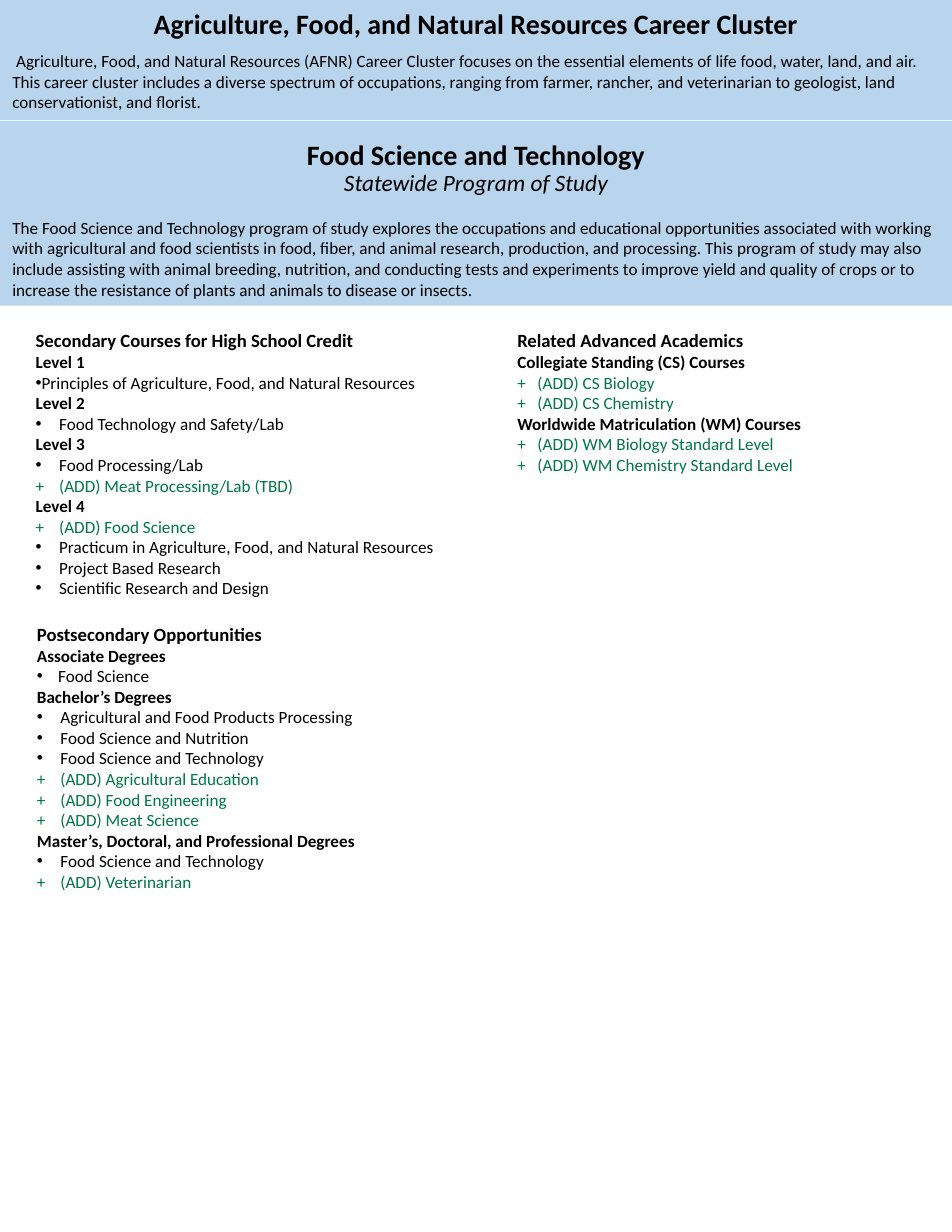
from lxml.etree import SubElement
from pptx import Presentation
from pptx.dml.color import RGBColor
from pptx.enum.text import MSO_ANCHOR as Anchor, PP_ALIGN as Align
from pptx.oxml.ns import qn
from pptx.util import Inches, Pt

THEME = {
    "font": "Calibri",
    "band": RGBColor.from_string("B9D4ED"),
    "text": RGBColor.from_string("000000"),
    "added": RGBColor.from_string("007742"),
    "title": 18,
    "subtitle": 15,
    "heading": 12,
    "body": 11,
}
STYLES = {
    "title": {"size": "title", "bold": True, "align": Align.CENTER},
    "subtitle": {"size": "subtitle", "italic": True, "align": Align.CENTER},
    "heading": {"size": "heading", "bold": True},
    "level": {"bold": True},
    "body": {},
    "flush": {"bullet": True},
    "course": {"bullet": True, "indent": 0.21},
    "degree": {"bullet": True, "indent": 0.19},
    "added": {"color": "added", "indent": 0.21, "lead": "+\t"},
    "advanced": {"color": "added", "indent": 0.18, "lead": "+\t"},
}

PROGRAM = [
    ("title", "Food Science and Technology"),
    ("subtitle", "Statewide Program of Study"),
]
CLUSTER = [
    ("title", "Agriculture, Food, and Natural Resources Career Cluster"),
    ("body", " Agriculture, Food, and Natural Resources (AFNR) Career Cluster focuses on "
             "the essential elements of life food, water, land, and air. This career cluster "
             "includes a diverse spectrum of occupations, ranging from farmer, rancher, and "
             "veterinarian to geologist, land conservationist, and florist."),
]
DESCRIPTION = [
    ("body", "The Food Science and Technology program of study explores the occupations and "
             "educational opportunities associated with working with agricultural and food "
             "scientists in food, fiber, and animal research, production, and processing. "
             "This program of study may also include assisting with animal breeding, "
             "nutrition, and conducting tests and experiments to improve yield and quality "
             "of crops or to increase the resistance of plants and animals to disease or "
             "insects."),
]
SECONDARY = [
    ("heading", "Secondary Courses for High School Credit"),
    ("level", "Level 1"),
    ("flush", "Principles of Agriculture, Food, and Natural Resources"),
    ("level", "Level 2"),
    ("course", "Food Technology and Safety/Lab"),
    ("level", "Level 3"),
    ("course", "Food Processing/Lab"),
    ("added", "(ADD) Meat Processing/Lab (TBD)"),
    ("level", "Level 4"),
    ("added", "(ADD) Food Science"),
    ("course", "Practicum in Agriculture, Food, and Natural Resources"),
    ("course", "Project Based Research"),
    ("course", "Scientific Research and Design"),
]
ADVANCED = [
    ("heading", "Related Advanced Academics"),
    ("level", "Collegiate Standing (CS) Courses"),
    ("advanced", "(ADD) CS Biology"),
    ("advanced", "(ADD) CS Chemistry"),
    ("level", "Worldwide Matriculation (WM) Courses"),
    ("advanced", "(ADD) WM Biology Standard Level"),
    ("advanced", "(ADD) WM Chemistry Standard Level"),
]
POSTSECONDARY = [
    ("heading", "Postsecondary Opportunities"),
    ("level", "Associate Degrees"),
    ("degree", "Food Science"),
    ("level", "Bachelor’s Degrees"),
    ("course", "Agricultural and Food Products Processing"),
    ("course", "Food Science and Nutrition"),
    ("course", "Food Science and Technology"),
    ("added", "(ADD) Agricultural Education"),
    ("added", "(ADD) Food Engineering"),
    ("added", "(ADD) Meat Science"),
    ("level", "Master’s, Doctoral, and Professional Degrees"),
    ("course", "Food Science and Technology"),
    ("added", "(ADD) Veterinarian"),
]

BANDS = [
    (PROGRAM, (0, 1.08, 8.5, 0.85), {"anchor": Anchor.MIDDLE, "line_spacing": 0.9}),
    (CLUSTER, (0, 0, 8.5, 1.07), {"space_after": Pt(6.6)}),
    (DESCRIPTION, (0, 1.88, 8.5, 0.85), {}),
]
LISTS = [
    (SECONDARY, (0.22, 2.88, 4.1, 3.04), {"side": 0.1}),
    (ADVANCED, (4.52, 2.88, 3.98, 1.52), {"side": 0.1}),
    (POSTSECONDARY, (0.22, 5.5, 3.9, 3.21), {}),
]


def write_paragraph(paragraph, style, text):
    paragraph.text = style.get("lead", "") + text
    paragraph.alignment = style.get("align", Align.LEFT)
    font = paragraph.font
    font.name = THEME["font"]
    font.size = Pt(THEME[style.get("size", "body")])
    font.bold = style.get("bold", False)
    font.italic = style.get("italic", False)
    font.color.rgb = THEME[style.get("color", "text")]
    properties = paragraph._p.get_or_add_pPr()
    indent = Inches(style.get("indent", 0))
    properties.set("marL", str(indent))
    properties.set("indent", str(-indent))
    if style.get("bullet"):
        SubElement(properties, qn("a:buFont")).set("typeface", "Arial")
        SubElement(properties, qn("a:buChar")).set("char", "•")
        properties.append(properties.find(qn("a:defRPr")))


def add_block(slide, lines, box, anchor=Anchor.TOP, line_spacing=None, space_after=None, side=0.11):
    shape = slide.shapes.add_textbox(*map(Inches, box))
    frame = shape.text_frame
    frame.word_wrap = True
    frame.vertical_anchor = anchor
    frame.margin_left = frame.margin_right = Inches(side)
    frame.margin_top = frame.margin_bottom = Inches(0.06)
    for index, (kind, text) in enumerate(lines):
        paragraph = frame.add_paragraph() if index else frame.paragraphs[0]
        paragraph.line_spacing = line_spacing
        paragraph.space_after = space_after
        write_paragraph(paragraph, STYLES[kind], text)
    return shape


def main():
    presentation = Presentation()
    presentation.slide_width, presentation.slide_height = Inches(8.5), Inches(11)
    slide = presentation.slides.add_slide(presentation.slide_layouts[6])
    for lines, box, options in BANDS:
        band = add_block(slide, lines, box, **options)
        band.fill.solid()
        band.fill.fore_color.rgb = THEME["band"]
    for lines, box, options in LISTS:
        add_block(slide, lines, box, **options)
    presentation.save("out.pptx")


if __name__ == "__main__":
    main()
